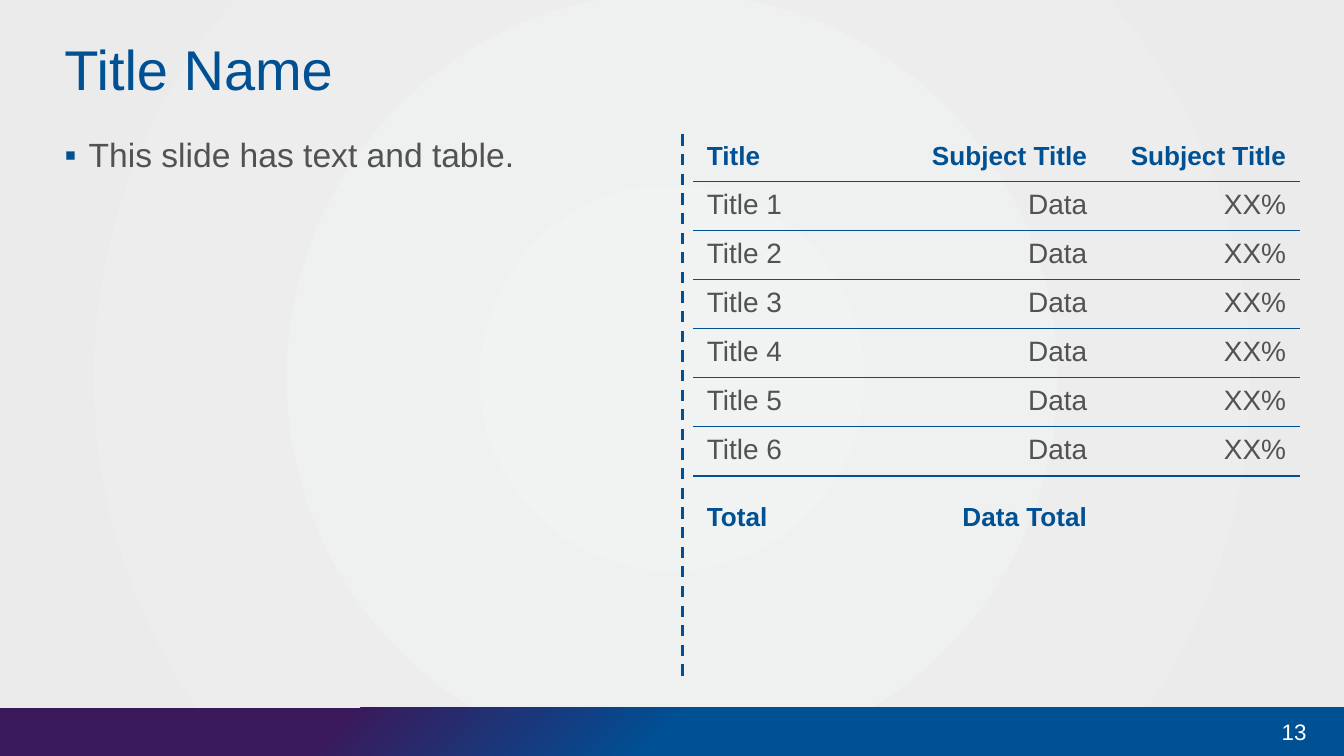
from lxml import etree
from pptx import Presentation
from pptx.dml.color import RGBColor
from pptx.enum.dml import MSO_LINE
from pptx.enum.shapes import MSO_CONNECTOR, MSO_SHAPE
from pptx.enum.text import MSO_ANCHOR, PP_ALIGN
from pptx.oxml.ns import qn
from pptx.util import Inches, Pt

BLUE = RGBColor(0x00, 0x50, 0x94)
PURPLE = RGBColor(0x3A, 0x19, 0x5B)
GRAY = RGBColor(0x52, 0x52, 0x52)
LIGHT = RGBColor(0xF1, 0xF2, 0xF2)
PALE = RGBColor(0xEB, 0xEB, 0xEC)
WHITE = RGBColor(0xFF, 0xFF, 0xFF)
DASH = MSO_LINE.DASH
STRAIGHT = MSO_CONNECTOR.STRAIGHT
RECTANGLE = MSO_SHAPE.RECTANGLE
MIDDLE, TOP = MSO_ANCHOR.MIDDLE, MSO_ANCHOR.TOP
LEFT, RIGHT = PP_ALIGN.LEFT, PP_ALIGN.RIGHT
NO_STYLE = "{2D5ABB26-0587-4C30-8999-92F81FD0307C}"


def add(parent, tag, **attrs):
    return etree.SubElement(parent, qn(tag), {k: str(v) for k, v in attrs.items()})


class Deck:
    font = "Arial"

    def __init__(self, width, height):
        self.prs = Presentation()
        self.prs.slide_width, self.prs.slide_height = Inches(width), Inches(height)
        self.s = self.prs.slides.add_slide(self.prs.slide_layouts[6])

    def gradient(self, fill, root, stops, focus):
        fill.gradient()
        grad = next(root.iter(qn("a:gradFill")))
        for child in list(grad):
            grad.remove(child)
        gs_list = add(grad, "a:gsLst")
        for pos, color in stops:
            add(add(gs_list, "a:gs", pos=pos * 1000), "a:srgbClr", val=color)
        sides = {side: pct * 1000 for side, pct in zip("ltrb", focus)}
        add(add(grad, "a:path", path="circle"), "a:fillToRect", **sides)

    def background(self, stops, focus):
        self.gradient(self.s.background.fill, self.s.element, stops, focus)

    def bar(self, x, y, w, h, stops, focus):
        sp = self.s.shapes.add_shape(RECTANGLE, Inches(x), Inches(y), Inches(w), Inches(h))
        sp.shadow.inherit = False
        sp.line.fill.background()
        self.gradient(sp.fill, sp.element, stops, focus)

    def divider(self, x, top, bottom):
        line = self.s.shapes.add_connector(STRAIGHT, Inches(x), Inches(top), Inches(x), Inches(bottom))
        line.line.color.rgb = BLUE
        line.line.width = Pt(1.5)
        line.line.dash_style = DASH
        add(line.element.spPr, "a:effectLst")

    def style(self, p, size, color, bold=False, align=LEFT):
        p.alignment = align
        f = p.font
        f.name, f.size, f.bold = self.font, Pt(size), bold
        f.color.rgb = color

    def text(self, text, x, y, w, h, size, color, anchor=TOP, align=LEFT,
             insets=(0, 0, 0, 0.05), bullet=None):
        tf = self.s.shapes.add_textbox(Inches(x), Inches(y), Inches(w), Inches(h)).text_frame
        tf.word_wrap = True
        tf.vertical_anchor = anchor
        tf.margin_left, tf.margin_top, tf.margin_right, tf.margin_bottom = map(Inches, insets)
        p = tf.paragraphs[0]
        p.text = text
        if bullet:
            pPr = p._p.get_or_add_pPr()
            pPr.set("marL", str(Inches(0.18)))
            pPr.set("indent", str(-Inches(0.18)))
            add(add(pPr, "a:buClr"), "a:srgbClr", val=BLUE)
            add(pPr, "a:buFont", typeface=self.font)
            add(pPr, "a:buChar", char=bullet)
        self.style(p, size, color, align=align)

    def border(self, cell, tag):
        ln = add(cell._tc.get_or_add_tcPr(), tag, w=Pt(1))
        add(add(ln, "a:solidFill"), "a:srgbClr", val=BLUE)

    def table(self, x, y, widths, heights, rows):
        frame = self.s.shapes.add_table(len(rows), len(widths), Inches(x), Inches(y),
                                        Inches(sum(widths)), Inches(sum(heights)))
        table = frame.table
        table.horz_banding = False
        next(frame.element.iter(qn("a:tableStyleId"))).text = NO_STYLE
        for column, width in zip(table.columns, widths):
            column.width = Inches(width)
        last = len(rows) - 1
        for i, values in enumerate(rows):
            table.rows[i].height = Inches(heights[i])
            strong = i in (0, last)
            for j, value in enumerate(values):
                cell = table.cell(i, j)
                cell.vertical_anchor = MIDDLE
                cell.margin_left = cell.margin_right = Inches(0.1)
                cell.margin_top = cell.margin_bottom = Inches(0.04)
                if i > 0:
                    self.border(cell, "a:lnT")
                if i < last:
                    self.border(cell, "a:lnB")
                cell.fill.background()
                p = cell.text_frame.paragraphs[0]
                p.text = value
                p.line_spacing = 0.9
                self.style(p, 14 if strong else 15, BLUE if strong else GRAY,
                           strong, RIGHT if j else LEFT)


def main():
    width, height = 10, 10 * 9 / 16
    bar_height = 0.36
    deck = Deck(width, height)
    deck.background([(0, LIGHT), (100, PALE)], (50, 50, 50, 50))
    deck.bar(0, height - bar_height, width, bar_height,
             [(0, BLUE), (50, BLUE), (75, PURPLE)], (100, 100, 0, 0))
    deck.divider(5.08, 1, 5.04)
    deck.text("Title Name", 0.48, 0.25, 9.13, 0.56, 30, BLUE, MIDDLE)
    deck.text("This slide has text and table.", 0.48, 1, 4.52, 4.04, 18, GRAY, bullet="▪")
    rows = [("Title", "Subject Title", "Subject Title")]
    rows += [(f"Title {n}", "Data", "XX%") for n in range(1, 7)]
    rows.append(("Total", "Data Total", ""))
    head, total = 0.35, 0.64
    body = (3.18 - head - total) / 6
    deck.table(5.16, 1, [1.42, 1.61, 1.48], [head] + [body] * 6 + [total], rows)
    deck.text("13", 9.26, height - bar_height, 0.56, bar_height, 12, WHITE, MIDDLE, RIGHT,
              (0.1, 0.05, 0.1, 0.05))
    deck.prs.save("out.pptx")


if __name__ == "__main__":
    main()
